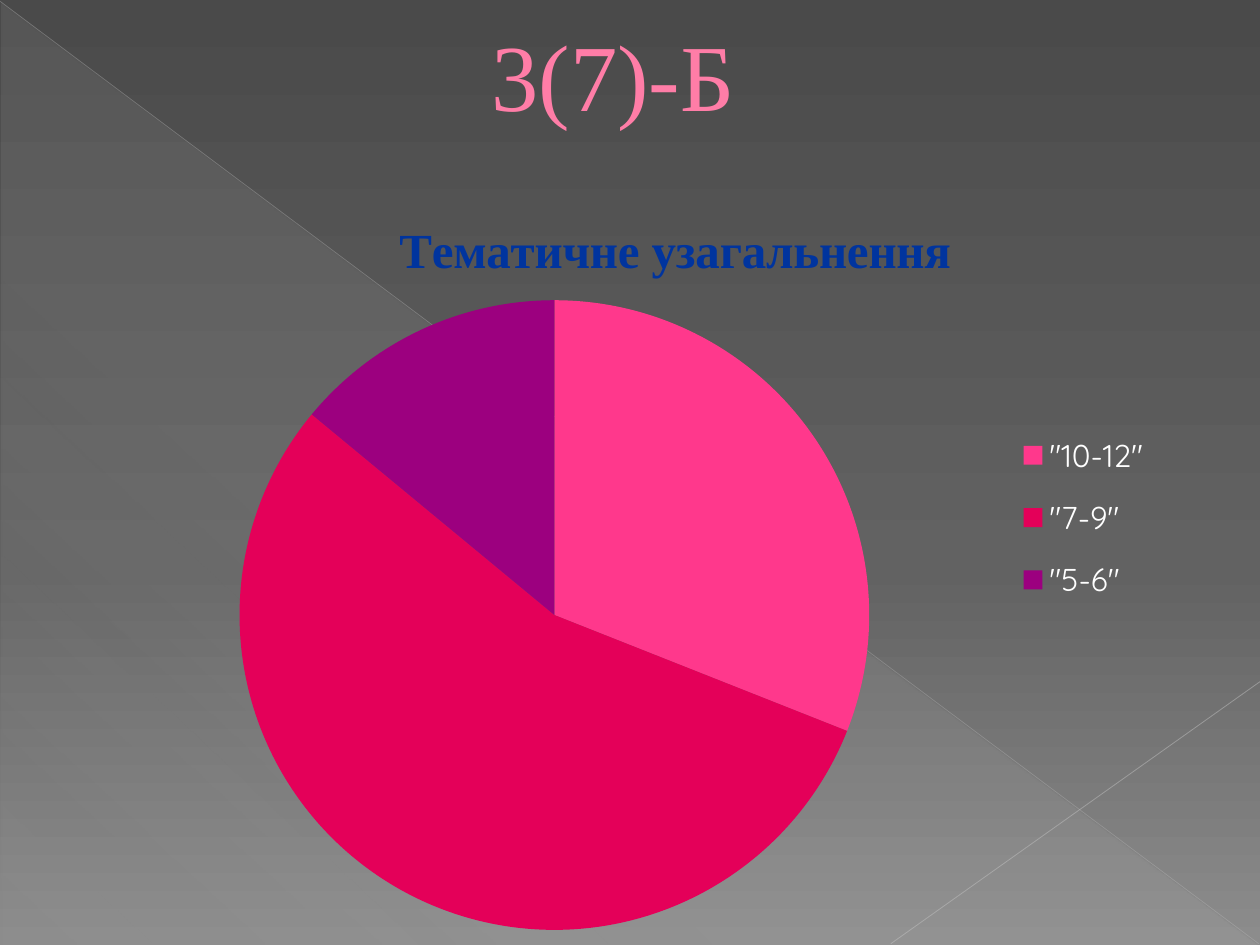
from lxml.etree import SubElement
from pptx import Presentation
from pptx.chart.data import CategoryChartData
from pptx.dml.color import RGBColor
from pptx.enum.chart import XL_CHART_TYPE, XL_LEGEND_POSITION
from pptx.enum.shapes import MSO_CONNECTOR, MSO_SHAPE
from pptx.enum.text import MSO_ANCHOR, PP_ALIGN
from pptx.oxml import parse_xml
from pptx.oxml.ns import nsdecls, qn
from pptx.util import Inches, Pt

HUES = {
    "dark": "4A4A4A", "mid": "626262", "pale": "8C8C8C", "veil": "D2D2D2",
    "long": "BFBFBF", "short": "C6C6C6", "white": "FFFFFF", "blue": "00349E",
    "pink": "FF7DA7", "edge": "B12761",
}
SLICES = [('"10-12"', 31, "FF388C"), ('"7-9"', 55, "E40059"), ('"5-6"', 14, "9C007F")]
HEAD = "Тематичне узагальнення"


def hue(name):
    return RGBColor.from_string(HUES[name])


def style(font, face, size, color, bold=False):
    font.name, font.size, font.bold = face, Pt(size), bold
    font.color.rgb = hue(color)


def fade(node, alpha):
    SubElement(node, qn("a:alpha"), val=str(alpha * 1000))


def blend(fill, angle, stops):
    fill.gradient()
    grad = fill._xPr.find(qn("a:gradFill"))
    items = grad.find(qn("a:gsLst"))
    for old in list(items):
        items.remove(old)
    for place, name, alpha in stops:
        stop = SubElement(items, qn("a:gs"), pos=str(place * 1000))
        fade(SubElement(stop, qn("a:srgbClr"), val=HUES[name]), alpha)
    line = grad.find(qn("a:lin"))
    line.set("ang", str(angle * 60000))
    line.set("scaled", "0")


def add_veil(slide):
    box = [Inches(n) for n in (0.01, 0.02, 9.98, 7.48)]
    veil = slide.shapes.add_shape(MSO_SHAPE.RIGHT_TRIANGLE, *box)
    veil.shadow.inherit = False
    veil.line.fill.background()
    blend(veil.fill, 133, [(0, "veil", 10), (70, "veil", 8), (100, "veil", 1)])


def add_line(slide, ends, color, width, alpha):
    line = slide.shapes.add_connector(MSO_CONNECTOR.STRAIGHT, *map(Inches, ends))
    line.line.color.rgb = hue(color)
    line.line.width = Pt(width)
    fade(line.line._ln.find(".//" + qn("a:srgbClr")), alpha)
    SubElement(line._element.spPr, qn("a:effectLst"))


def place(node, index, **spots):
    for old in node.findall(qn("c:layout")):
        node.remove(old)
    layout = parse_xml(f"<c:layout {nsdecls('c')}/>")
    manual = SubElement(layout, qn("c:manualLayout"))
    if "w" in spots and index == 0:
        SubElement(manual, qn("c:layoutTarget"), val="inner")
    for axis in "xy":
        SubElement(manual, qn(f"c:{axis}Mode"), val="edge")
    for key, value in spots.items():
        SubElement(manual, qn(f"c:{key}"), val=str(value))
    node.insert(index, layout)


def add_pie(slide):
    data = CategoryChartData()
    data.categories = [name for name, _, _ in SLICES]
    data.add_series(HEAD, [value for _, value, _ in SLICES])
    box = [Inches(n) for n in (0, 1.55, 10, 5.95)]
    chart = slide.shapes.add_chart(XL_CHART_TYPE.PIE, *box, data).chart
    style(chart.font, "Quicksand", 18, "white")
    plot = chart.plots[0]
    plot.vary_by_categories = True
    for index, (_, _, color) in enumerate(SLICES):
        fill = plot.series[0].points[index].format.fill
        fill.solid()
        fill.fore_color.rgb = RGBColor.from_string(color)
    chart.has_title = True
    title = chart.chart_title
    title.text_frame.text = HEAD
    style(title.text_frame.paragraphs[0].font, "Times New Roman", 28, "blue", True)
    chart.has_legend = True
    chart.legend.position = XL_LEGEND_POSITION.RIGHT
    chart.legend.include_in_layout = False
    place(title._element, 1, x=0.31, y=0.02)
    place(chart.legend._element, 1, x=0.8, y=0.29, w=0.12, h=0.28)
    place(plot._element.getparent(), 0, x=0.19, y=0.14, w=0.5, h=0.84)


def set_title(slide):
    title = slide.shapes.title
    title.left, title.top = Inches(3.27), Inches(0)
    title.width, title.height = Inches(3.86), Inches(1.17)
    frame = title.text_frame
    frame.text = "3(7)-Б"
    frame.word_wrap = True
    frame.vertical_anchor = MSO_ANCHOR.MIDDLE
    para = frame.paragraphs[0]
    para.alignment = PP_ALIGN.LEFT
    props = para._p.get_or_add_pPr()
    props.set("marL", str(Inches(0.53)))
    props.set("indent", "0")
    style(para.font, "Times New Roman", 54, "pink")
    edge = parse_xml(f'<a:ln {nsdecls("a")} w="6350"><a:solidFill>'
                     f'<a:srgbClr val="{HUES["edge"]}"/></a:solidFill></a:ln>')
    props.find(qn("a:defRPr")).insert(0, edge)
    slide.shapes._spTree.append(title._element)


def main():
    """Build the slide with the pie of marks and save it."""
    deck = Presentation()
    deck.slide_width, deck.slide_height = Inches(10), Inches(7.5)
    slide = deck.slides.add_slide(deck.slide_layouts[5])
    blend(slide.background.fill, 90,
          [(0, "dark", 100), (60, "mid", 100), (100, "pale", 100)])
    add_veil(slide)
    add_line(slide, (0, 0.01, 9.99, 7.49), "long", 0.39, 35)
    add_line(slide, (10, 5.41, 7.07, 7.49), "short", 0.47, 45)
    add_pie(slide)
    set_title(slide)
    deck.save("out.pptx")


if __name__ == "__main__":
    main()
